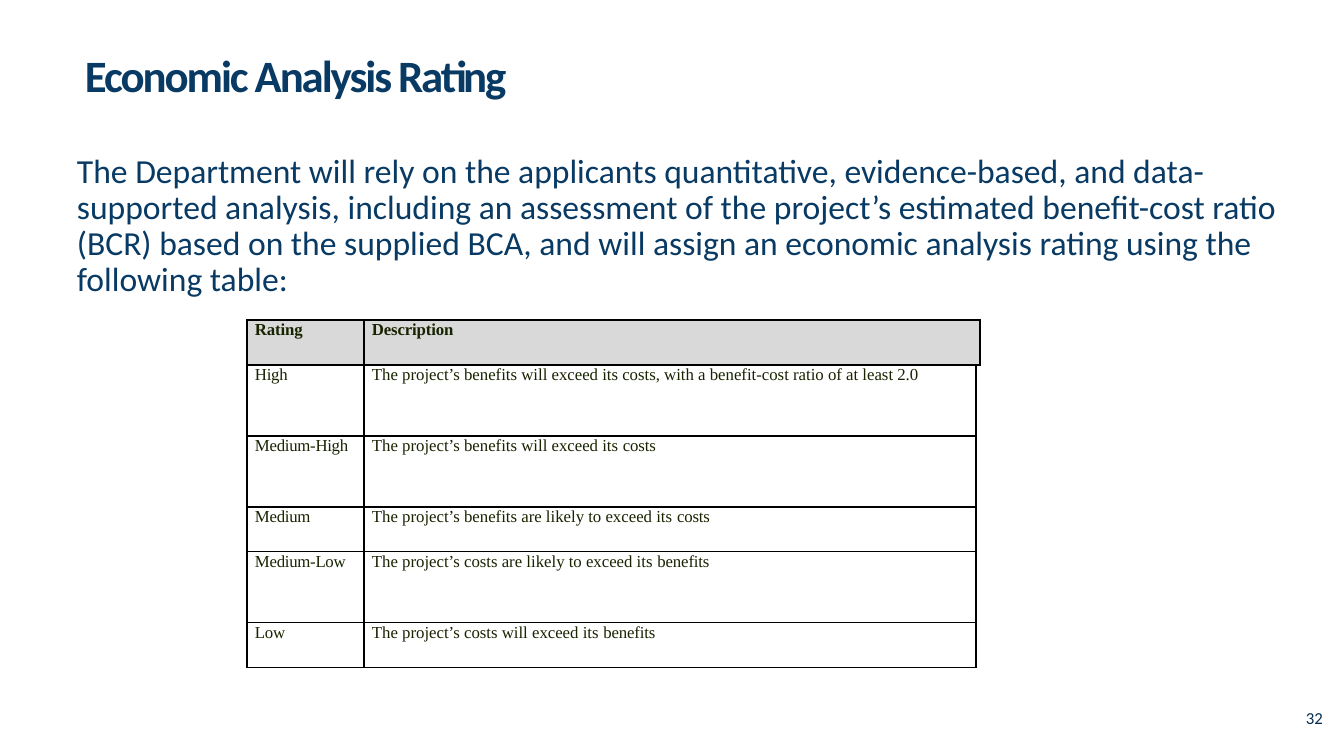
from lxml import etree
from pptx import Presentation
from pptx.dml.color import RGBColor
from pptx.enum.text import MSO_ANCHOR
from pptx.oxml.ns import qn
from pptx.util import Emu, Pt

EMU_PER_PX = 914400 / 100.8
TOP, MIDDLE = MSO_ANCHOR.TOP, MSO_ANCHOR.MIDDLE

NAVY = RGBColor(0x08, 0x3A, 0x64)
DARK_NAVY = RGBColor(0x06, 0x2B, 0x4B)
OLIVE = RGBColor(0x18, 0x23, 0x00)
GREY = RGBColor(0xD9, 0xD9, 0xD9)
BLACK = RGBColor(0x00, 0x00, 0x00)

TITLE = {"name": "Calibri", "size": Pt(32), "bold": True}
BODY = {"name": "Calibri", "size": Pt(24)}
NUMBER = {"name": "Calibri", "size": Pt(12)}
TABLE_TEXT = {"name": "Times New Roman", "size": Pt(12), "bold": False}
TABLE_HEAD = {**TABLE_TEXT, "bold": True}

INTRO = (
    "The Department will rely on the applicants quantitative, evidence-based, "
    "and data-supported analysis, including an assessment of the project’s "
    "estimated benefit-cost ratio (BCR) based on the supplied BCA, and will "
    "assign an economic analysis rating using the following table:"
)
COLUMN_WIDTHS = [117, 612, 3]
ROW_HEIGHTS = [45, 71, 71, 45, 71, 45]
HEADINGS = ["Rating", "Description"]
# Rating, start of its description, closing word set slightly tighter
RATINGS = [
    ("High", "The project’s benefits will exceed its costs, "
             "with a benefit-cost ratio of at least 2.0", ""),
    ("Medium-High", "The project’s benefits will exceed its ", "costs"),
    ("Medium", "The project’s benefits are likely to exceed its ", "costs"),
    ("Medium-Low", "The project’s costs are likely to exceed its ", "benefits"),
    ("Low", "The project’s costs will exceed its ", "benefits"),
]


def px(length):
    return Emu(round(length * EMU_PER_PX))


def add_span(para, text, style, colour, tracking=0):
    """Add a run; tracking is in hundredths of a point."""
    span = para.add_run()
    span.text = text
    for name, value in style.items():
        setattr(span.font, name, value)
    span.font.color.rgb = colour
    if tracking:
        span.font._element.set("spc", str(tracking))


def add_text(page, place, text, style, colour, inset=(0, 0), anchor=TOP,
             line_spacing=None, tracking=0):
    frame = page.shapes.add_textbox(*map(px, place)).text_frame
    across, down = map(px, inset)
    layout = {"word_wrap": True, "vertical_anchor": anchor,
              "margin_left": across, "margin_right": across,
              "margin_top": down, "margin_bottom": down}
    for name, value in layout.items():
        setattr(frame, name, value)
    para = frame.paragraphs[0]
    para.line_spacing = line_spacing
    add_span(para, text, style, colour, tracking)


def set_borders(cell, sides):
    """Rule the named sides (L, R, T, B) and clear the others."""
    properties = cell._tc.get_or_add_tcPr()
    for position, side in enumerate("LRTB"):
        line = etree.Element(qn(f"a:ln{side}"), w=str(Pt(1)))
        if side in sides:
            fill = etree.SubElement(line, qn("a:solidFill"))
            etree.SubElement(fill, qn("a:srgbClr"), val=str(BLACK))
        else:
            etree.SubElement(line, qn("a:noFill"))
        properties.insert(position, line)


def format_cell(cell, sides="LRTB", fill=None, indent=0):
    margins = {"margin_left": px(indent), "margin_right": 0,
               "margin_top": 0, "margin_bottom": 0}
    for name, value in margins.items():
        setattr(cell, name, value)
    if fill is None:
        cell.fill.background()
    else:
        cell.fill.solid()
        cell.fill.fore_color.rgb = fill
    set_borders(cell, sides)


def fill_cell(cell, spans, style, fill=None):
    format_cell(cell, fill=fill, indent=8)
    para = cell.text_frame.paragraphs[0]
    para.line_spacing = Pt(13.8)
    for text, tracking in spans:
        if text:
            add_span(para, text, style, OLIVE, tracking)


def add_rating_table(page, left, top):
    place = (left, top, sum(COLUMN_WIDTHS), sum(ROW_HEIGHTS))
    table = page.shapes.add_table(
        len(ROW_HEIGHTS), len(COLUMN_WIDTHS), *map(px, place)).table
    table.first_row = table.horz_banding = False
    for column, width in zip(table.columns, COLUMN_WIDTHS):
        column.width = px(width)
    for row, height in zip(table.rows, ROW_HEIGHTS):
        row.height = px(height)

    table.cell(0, 1).merge(table.cell(0, 2))
    for index, heading in enumerate(HEADINGS):
        fill_cell(table.cell(0, index), [(heading, -10)], TABLE_HEAD, GREY)
    format_cell(table.cell(0, 2), fill=GREY)

    for index, (rating, description, last_word) in enumerate(RATINGS, 1):
        fill_cell(table.cell(index, 0), [(rating, -20)], TABLE_TEXT)
        fill_cell(table.cell(index, 1),
                  [(description, 0), (last_word, -10)], TABLE_TEXT)
        edge = table.cell(index, 2)
        format_cell(edge, sides="LT" if index == 1 else "L")
        edge.text_frame.paragraphs[0].font.size = Pt(12)


def main():
    deck = Presentation()
    deck.slide_width, deck.slide_height = px(1344), px(756)
    page = deck.slides.add_slide(deck.slide_layouts[6])
    add_text(page, (85, 53, 1055, 49), "Economic Analysis Rating", TITLE, NAVY,
             anchor=MIDDLE, line_spacing=0.9, tracking=-150)
    add_text(page, (77, 154, 1233, 151), INTRO, BODY, NAVY, line_spacing=0.9)
    add_text(page, (1296, 703, 47, 47), "32", NUMBER, DARK_NAVY, inset=(10, 5))
    add_rating_table(page, 247, 320)
    deck.save("out.pptx")


if __name__ == "__main__":
    main()
